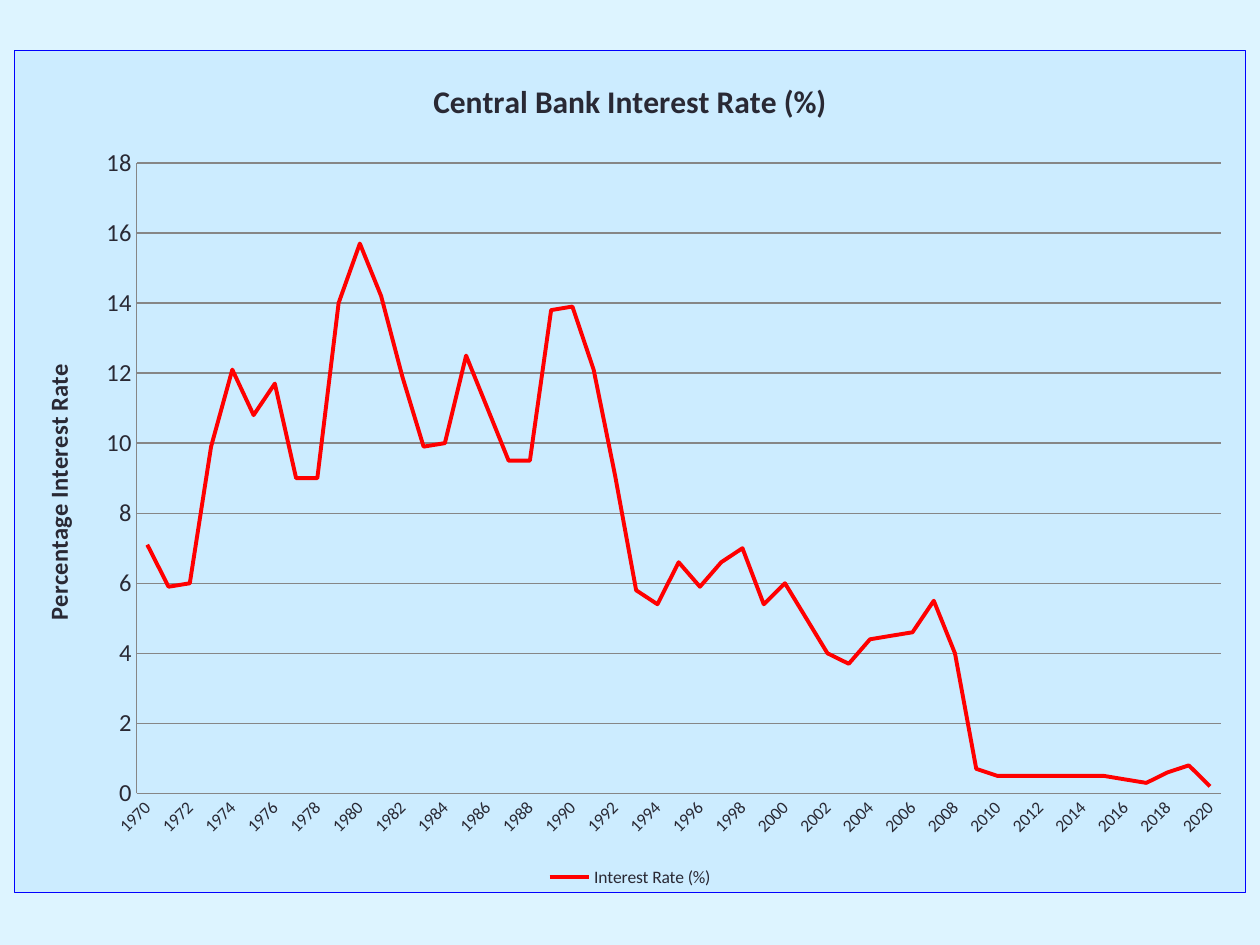
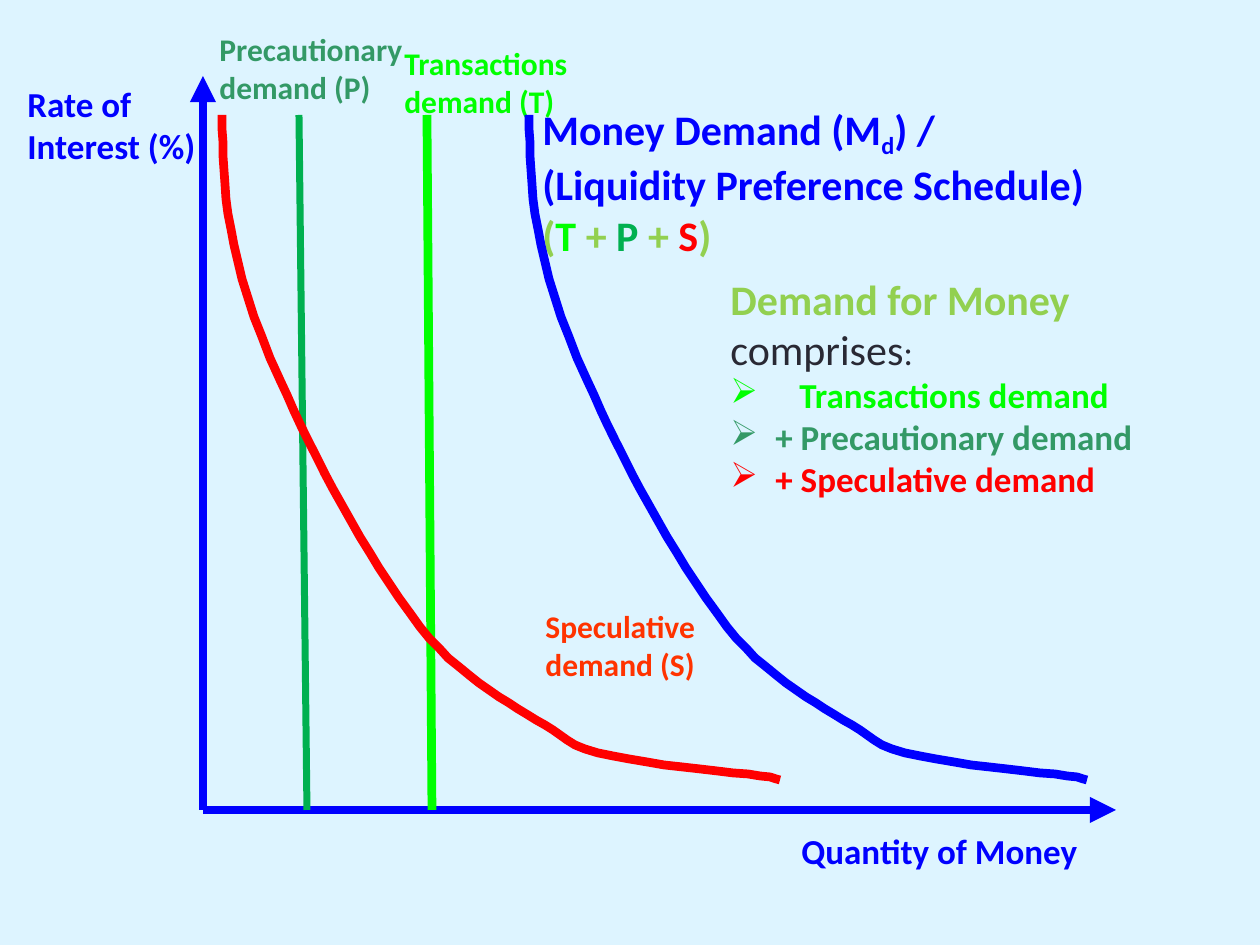
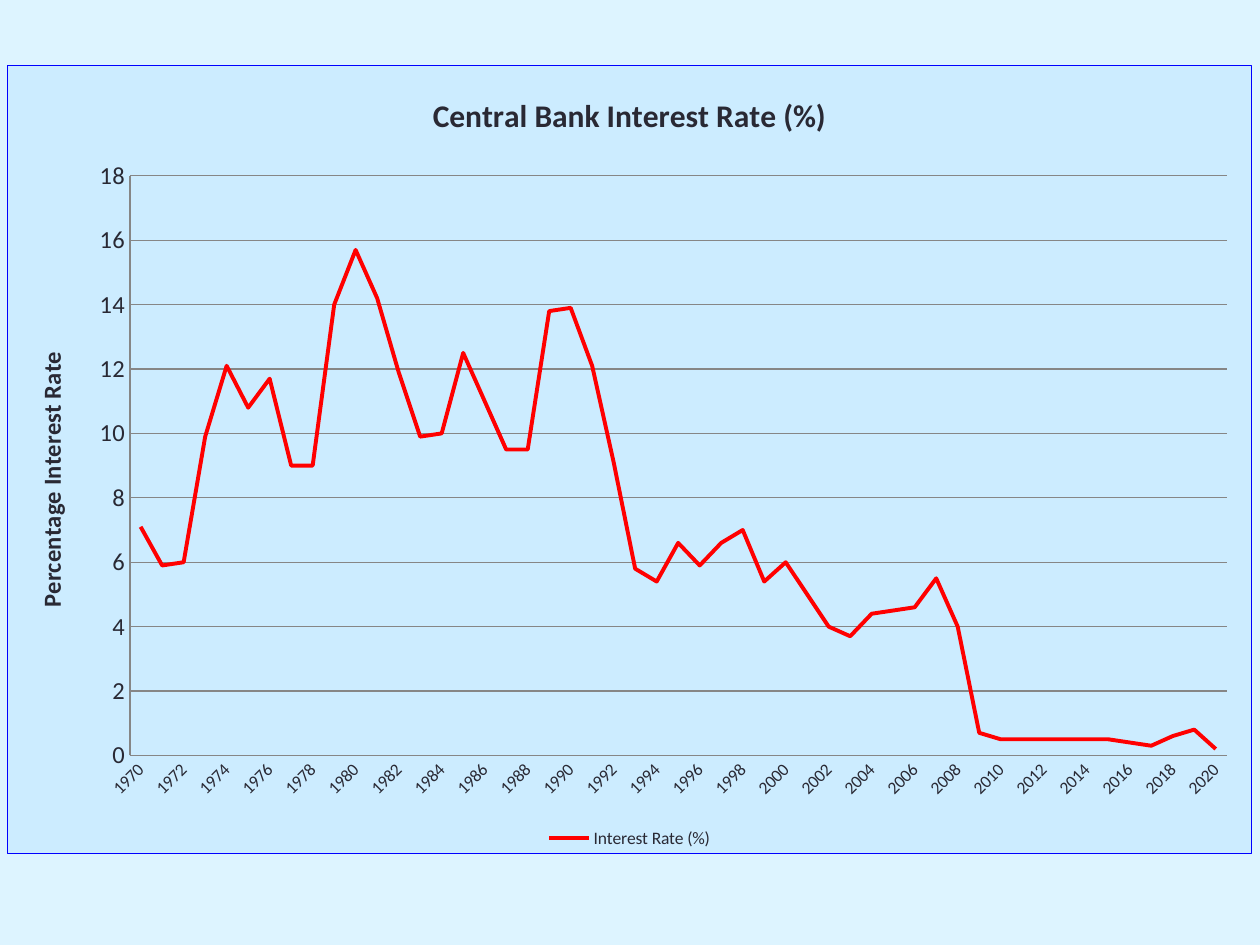
from lxml.etree import SubElement
from pptx import Presentation
from pptx.chart.data import CategoryChartData
from pptx.dml.color import RGBColor
from pptx.enum.chart import XL_CHART_TYPE as ChartType
from pptx.enum.chart import XL_LEGEND_POSITION as LegendPosition
from pptx.enum.chart import XL_TICK_MARK as TickMark
from pptx.enum.shapes import MSO_CONNECTOR as Connector
from pptx.enum.text import MSO_ANCHOR as Anchor
from pptx.enum.text import MSO_AUTO_SIZE as AutoSize
from pptx.oxml import parse_xml
from pptx.oxml.ns import nsdecls, qn
from pptx.util import Pt

PX = 914400 / 126
FONT = "Calibri"
BACKGROUND, PANEL, INK, GRID = "DDF4FF", "CCECFF", "292934", "868686"
BLUE, RED, ORANGE = "0000FF", "FF0000", "FF3300"
LIME, OLIVE, GREEN, SEA = "00FF00", "92D050", "00B050", "339966"

YEARS = [str(year) for year in range(1970, 2021)]
RATES = [
    7.1, 5.9, 6, 9.9, 12.1, 10.8, 11.7, 9, 9, 14,
    15.7, 14.2, 11.9, 9.9, 10, 12.5, 11, 9.5, 9.5, 13.8,
    13.9, 12.1, 9.1, 5.8, 5.4, 6.6, 5.9, 6.6, 7, 5.4,
    6, 5, 4, 3.7, 4.4, 4.5, 4.6, 5.5, 4, 0.7,
    0.5, 0.5, 0.5, 0.5, 0.5, 0.5, 0.4, 0.3, 0.6, 0.8, 0.2,
]
DEMAND_CURVE = [
    (0, 0), (1, 72), (3, 144), (58, 265), (93, 345), (142, 437), (198, 512),
    (246, 572), (311, 600), (345, 625), (378, 651), (549, 658), (558, 665),
]


def px(length):
    return round(length * PX)


def rgb(color):
    return RGBColor.from_string(color)


def style_font(font, size=None, color=None, bold=None):
    font.name = FONT
    if size:
        font.size = Pt(size)
    if color:
        font.color.rgb = rgb(color)
    if bold is not None:
        font.bold = bold


def style_line(line, color, width):
    line.color.rgb = rgb(color)
    line.width = Pt(width)


def add_slide(deck):
    slide = deck.slides.add_slide(deck.slide_layouts[6])
    slide.background.fill.solid()
    slide.background.fill.fore_color.rgb = rgb(BACKGROUND)
    return slide


def panel_format(border):
    return parse_xml(
        f'<c:spPr {nsdecls("c", "a")}><a:solidFill><a:srgbClr val="{PANEL}"/></a:solidFill>'
        f"<a:ln w=\"9525\">{border}</a:ln></c:spPr>"
    )


def style_axis(axis, label_size, label_angle=0):
    axis.major_tick_mark = axis.minor_tick_mark = TickMark.NONE
    style_line(axis.format.line, GRID, 0.75)
    style_font(axis.tick_labels.font, label_size, INK)
    for body in axis._element.findall(f"{qn('c:txPr')}/{qn('a:bodyPr')}"):
        body.set("rot", str(label_angle * 60000))


def add_rate_chart(slide, left, top, width, height):
    rates = CategoryChartData(number_format="0.0")
    rates.categories = YEARS
    rates.add_series("Interest Rate (%)", RATES)
    chart = slide.shapes.add_chart(
        ChartType.LINE, px(left), px(top), px(width), px(height), rates
    ).chart
    style_font(chart.font, 10, INK)

    chart.has_title = True
    heading = chart.chart_title.text_frame
    heading.text = "Central Bank Interest Rate (%)"
    style_font(heading.paragraphs[0].font, 18, INK, True)

    chart.has_legend = True
    chart.legend.position = LegendPosition.BOTTOM
    chart.legend.include_in_layout = False
    style_font(chart.legend.font, 10, INK)

    style_axis(chart.category_axis, 10, -45)
    percent_axis = chart.value_axis
    style_axis(percent_axis, 14)
    percent_axis.minimum_scale, percent_axis.maximum_scale = 0, 18
    percent_axis.major_unit = 2
    percent_axis.tick_labels.number_format = "0"
    percent_axis.tick_labels.number_format_is_linked = False
    style_line(percent_axis.major_gridlines.format.line, GRID, 0.75)
    caption = percent_axis.axis_title.text_frame
    caption.text = "Percentage Interest Rate"
    style_font(caption.paragraphs[0].font, 14, INK, True)
    caption._txBody.find(qn("a:bodyPr")).set("rot", "-5400000")

    plot = chart.plots[0]
    plot.vary_by_categories = False
    rate_series = plot.series[0]
    rate_series.smooth = False
    style_line(rate_series.format.line, RED, 2.25)

    chart_part = chart._chartSpace.find(qn("c:chart"))
    border = f'<a:solidFill><a:srgbClr val="{BLUE}"/></a:solidFill>'
    chart_part.addnext(panel_format(border))
    chart_part.find(qn("c:plotArea")).append(panel_format("<a:noFill/>"))


def add_line(slide, start, end, color, width, arrow=False):
    line = slide.shapes.add_connector(
        Connector.STRAIGHT, *(px(value) for value in (*start, *end))
    )
    style_line(line.line, color, width)
    properties = line._element.spPr
    if arrow:
        SubElement(properties.find(qn("a:ln")), qn("a:tailEnd"), type="triangle")
    SubElement(properties, qn("a:effectLst"))


def bezier_point(controls, t):
    weights = ((1 - t) ** 3, 3 * t * (1 - t) ** 2, 3 * t**2 * (1 - t), t**3)
    return tuple(
        sum(weight * point[axis] for weight, point in zip(weights, controls))
        for axis in (0, 1)
    )


def add_demand_curve(slide, left, top, color, steps=16):
    points = [
        bezier_point(DEMAND_CURVE[first:first + 4], step / steps)
        for first in range(0, len(DEMAND_CURVE) - 1, 3)
        for step in range(1, steps + 1)
    ]
    builder = slide.shapes.build_freeform(*DEMAND_CURVE[0], scale=PX)
    builder.add_line_segments(points, close=False)
    curve = builder.convert_to_shape(px(left), px(top))
    curve.fill.background()
    curve.shadow.inherit = False
    style_line(curve.line, color, 5)


def add_text_box(slide, left, top, width, height):
    frame = slide.shapes.add_textbox(px(left), px(top), px(width), px(height)).text_frame
    frame.word_wrap = True
    frame.auto_size = AutoSize.SHAPE_TO_FIT_TEXT
    return frame


def add_label(slide, box, text, size, color):
    label = add_text_box(slide, *box).paragraphs[0]
    label.text = text
    style_font(label.font, size, color, True)


def add_run(paragraph, text, color, **style):
    run = paragraph.add_run()
    run.text = text
    style_font(run.font, color=color, **style)
    return run


def add_schedule_title(slide, left, top, width, height):
    frame = add_text_box(slide, left, top, width, height)
    frame.vertical_anchor = Anchor.BOTTOM
    title = frame.paragraphs[0]
    style_font(title.font, 24, bold=True)
    add_run(title, "Money Demand (M", BLUE)
    subscript = add_run(title, "d", BLUE)
    subscript.font._element.set("baseline", "-20000")
    add_run(title, ") / (Liquidity Preference Schedule) ", BLUE)
    for text, color in (("(", OLIVE), ("T", LIME), (" + ", OLIVE), ("P", GREEN),
                        (" + ", OLIVE), ("S", RED), (")", OLIVE)):
        add_run(title, text, color)


def add_components(slide, left, top, width, height):
    frame = add_text_box(slide, left, top, width, height)
    intro = frame.paragraphs[0]
    style_font(intro.font)
    add_run(intro, "Demand for Money ", OLIVE, size=24, bold=True)
    add_run(intro, "comprises", INK, size=24)
    add_run(intro, ":", INK, size=20)
    for text, color, indent in (
        ("Transactions demand", LIME, 69),
        ("+ Precautionary demand", SEA, 45),
        ("+ Speculative demand", RED, 45),
    ):
        component = frame.add_paragraph()
        component.text = text
        properties = component._p.get_or_add_pPr()
        properties.set("marL", str(px(indent)))
        properties.set("indent", str(-px(indent)))
        SubElement(properties, qn("a:buChar"), char="➢")
        style_font(component.font, 20, color, True)


def add_demand_graph(slide, left, top, width, height):
    def at(x, y, *size):
        return (left + x, top + y, *size)

    curve_top = 39
    origin = at(0, height)
    add_line(slide, origin, at(0, 0), BLUE, 5, arrow=True)
    add_line(slide, origin, at(width, height), BLUE, 5, arrow=True)
    add_line(slide, at(96, curve_top), at(104, height), GREEN, 4)
    add_line(slide, at(229, height), at(224, curve_top), LIME, 5)
    for box, text, size, color in (
        (at(-188, 0, 218, 97), "Rate of Interest (%)", 20, BLUE),
        (at(586, 747, 307, 55), "Quantity of Money", 20, BLUE),
        (at(4, -52, 248, 89), "Precautionary demand (P)", 18, SEA),
        (at(189, -38, 238, 89), "Transactions demand (T)", 18, LIME),
        (at(330, 525, 218, 88), "Speculative demand (S)", 18, ORANGE),
    ):
        add_label(slide, box, text, size, color)
    add_schedule_title(slide, *at(327, 25, 586, 165))
    add_components(slide, *at(515, 191, 447, 242))
    add_demand_curve(slide, *at(19, curve_top), RED)
    add_demand_curve(slide, *at(326, curve_top), BLUE)


def main():
    deck = Presentation()
    deck.slide_width, deck.slide_height = px(1260), px(945)
    add_rate_chart(add_slide(deck), 14, 50, 1232, 843)
    add_demand_graph(add_slide(deck), 203, 76, 913, 734)
    add_rate_chart(add_slide(deck), 7, 65, 1245, 789)
    deck.save("out.pptx")


if __name__ == "__main__":
    main()
